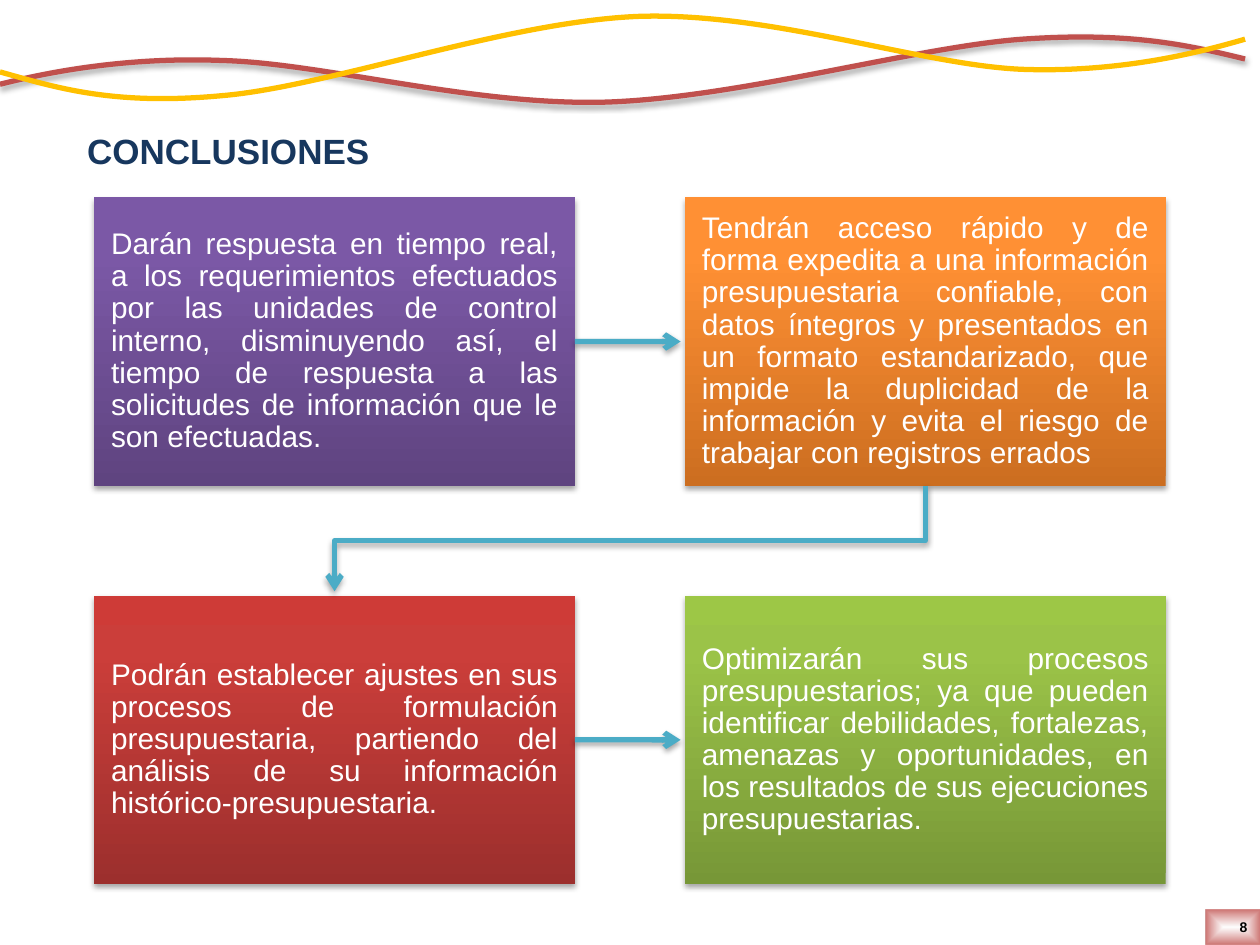
from pptx import Presentation
from pptx.dml.color import RGBColor
from pptx.enum.shapes import MSO_CONNECTOR, MSO_SHAPE
from pptx.enum.text import MSO_ANCHOR, MSO_AUTO_SIZE, PP_ALIGN
from pptx.oxml import parse_xml
from pptx.oxml.ns import nsdecls, qn
from pptx.util import Cm, Pt

NAVY = RGBColor(0x17, 0x37, 0x5E)
BRICK = RGBColor(0xC0, 0x50, 0x4D)
GOLD = RGBColor(0xFF, 0xC0, 0x00)
TEAL = RGBColor(0x4B, 0xAC, 0xC6)
BLACK = RGBColor(0x00, 0x00, 0x00)
WHITE = RGBColor(0xFF, 0xFF, 0xFF)
PURPLES = [RGBColor(0x5F, 0x44, 0x80), RGBColor(0x7B, 0x58, 0xA6), RGBColor(0x7C, 0x57, 0xA8)]
ORANGES = [RGBColor(0xCC, 0x6E, 0x20), RGBColor(0xFF, 0x90, 0x34), RGBColor(0xFF, 0x91, 0x36)]
REDS = [RGBColor(0x9C, 0x2F, 0x2D), RGBColor(0xCB, 0x3E, 0x3A), RGBColor(0xCE, 0x3B, 0x37)]
GREENS = [RGBColor(0x77, 0x97, 0x37), RGBColor(0x9B, 0xC3, 0x48), RGBColor(0x9D, 0xC7, 0x46)]

SHADOW = (
    f'<a:effectLst {nsdecls("a")}><a:outerShdw blurRad="40000" dist="23000" dir="5400000" '
    'rotWithShape="0"><a:srgbClr val="000000"><a:alpha val="35000"/></a:srgbClr>'
    '</a:outerShdw></a:effectLst>'
)
NO_SHADOW = f'<a:effectLst {nsdecls("a")}/>'
ARROWHEAD = f'<a:tailEnd {nsdecls("a")} type="arrow"/>'
UPWARD = '<a:lin ang="16200000" scaled="0"/>'
FROM_CENTRE = '<a:path path="shape"><a:fillToRect l="50000" t="50000" r="50000" b="50000"/></a:path>'


def fill_gradient(shape, stops, direction):
    marks = "".join(
        f'<a:gs pos="{position * 1000}"><a:srgbClr val="{color}">'
        f'<a:alpha val="{opacity * 1000}"/></a:srgbClr></a:gs>'
        for position, color, opacity in stops
    )
    gradient = f'<a:gradFill {nsdecls("a")} rotWithShape="1"><a:gsLst>{marks}</a:gsLst>{direction}</a:gradFill>'
    shape.element.spPr.append(parse_xml(gradient))
    shape.line.fill.background()


def style_line(stroke, color, effect, head=None):
    stroke.line.color.rgb = color
    stroke.line.width = Pt(3)
    properties = stroke.element.spPr
    if head:
        properties.find(qn("a:ln")).append(parse_xml(head))
    properties.append(parse_xml(effect))


prs = Presentation()
prs.slide_width, prs.slide_height = Cm(25.4), Cm(19.05)
slide = prs.slides.add_slide(prs.slide_layouts[5])
shapes = slide.shapes

waves = [
    (BRICK, SHADOW, [(25.1, 1.19), (23.95, 0.91), (22.78, 0.64), (20.62, 0.79),
                     (18.49, 0.94), (14.88, 1.98), (12.19, 2.06),
                     (9.5, 2.13), (6.5, 1.27), (4.47, 1.22),
                     (2.44, 1.14), (0.79, 1.5), (0, 1.7)]),
    (GOLD, NO_SHADOW, [(0, 1.45), (1.17, 1.78), (2.31, 2.13), (4.47, 1.93),
                       (6.63, 1.75), (10.21, 0.43), (12.9, 0.33),
                       (15.6, 0.25), (18.59, 1.32), (20.62, 1.4),
                       (22.66, 1.47), (24.31, 1.02), (25.1, 0.79)]),
]
for color, effect, knots in waves:
    start, *controls = [(Cm(x), Cm(y)) for x, y in knots]
    builder = shapes.build_freeform(*start)
    builder.add_line_segments(controls, close=False)
    wave = builder.convert_to_shape()
    segments = list(wave.element.spPr.iter(qn("a:lnTo")))
    for first in range(0, len(segments), 3):
        curve = parse_xml(f'<a:cubicBezTo {nsdecls("a")}/>')
        segments[first].addprevious(curve)
        for segment in segments[first:first + 3]:
            curve.append(segment[0])
            segment.getparent().remove(segment)
    wave.fill.background()
    style_line(wave, color, effect)

heading = shapes.title
heading_format = {"left": Cm(1.5), "top": Cm(2.47), "width": Cm(6.27), "height": Cm(1.12)}
for name, value in heading_format.items():
    setattr(heading, name, value)
heading.text_frame.text = "CONCLUSIONES"
heading.text_frame.word_wrap = False
heading.text_frame.auto_size = MSO_AUTO_SIZE.NONE
heading.text_frame.vertical_anchor = MSO_ANCHOR.MIDDLE
heading.text_frame.paragraphs[0].alignment = PP_ALIGN.LEFT
heading_font = {"name": "Arial", "size": Pt(20), "bold": True}
for name, value in heading_font.items():
    setattr(heading.text_frame.paragraphs[0].font, name, value)
heading.text_frame.paragraphs[0].font.color.rgb = NAVY

LEFT, TOP, WIDTH, HEIGHT = 1.9, 3.98, 9.69, 5.81
COLUMN_STEP, ROW_STEP, ARROW_LENGTH = 11.91, 8.03, 2.13
conclusions = [
    (PURPLES, "Darán respuesta en tiempo real, a los requerimientos efectuados por las unidades de "
              "control interno, disminuyendo así, el tiempo de respuesta a las solicitudes de "
              "información que le son efectuadas."),
    (ORANGES, "Tendrán acceso rápido y de forma expedita a una información presupuestaria confiable, "
              "con datos íntegros y presentados en un formato estandarizado, que impide la duplicidad "
              "de la información y evita el riesgo de trabajar con registros errados"),
    (REDS, "Podrán establecer ajustes en sus procesos de formulación presupuestaria, partiendo del "
           "análisis de su información histórico-presupuestaria."),
    (GREENS, "Optimizarán sus procesos presupuestarios; ya que pueden identificar debilidades, "
             "fortalezas, amenazas y oportunidades, en los resultados de sus ejecuciones "
             "presupuestarias."),
]
frame_format = {"word_wrap": True, "vertical_anchor": MSO_ANCHOR.MIDDLE,
                "margin_left": Cm(0.34), "margin_right": Cm(0.34),
                "margin_top": Cm(0.34), "margin_bottom": Cm(0.34)}
for index, (tones, sentence) in enumerate(conclusions):
    row, column = divmod(index, 2)
    x, y = LEFT + column * COLUMN_STEP, TOP + row * ROW_STEP
    card = shapes.add_shape(MSO_SHAPE.RECTANGLE, Cm(x), Cm(y), Cm(WIDTH), Cm(HEIGHT))
    fill_gradient(card, zip((0, 80, 100), tones, (100, 100, 100)), UPWARD)
    card.element.spPr.append(parse_xml(SHADOW))
    for name, value in frame_format.items():
        setattr(card.text_frame, name, value)
    paragraph = card.text_frame.paragraphs[0]
    paragraph.text = sentence
    paragraph.alignment = PP_ALIGN.JUSTIFY
    paragraph.line_spacing = 0.9
    paragraph.font.name, paragraph.font.size = "Arial", Pt(17)
    paragraph.font.color.rgb = WHITE
    if column == 0:
        edge, middle = x + WIDTH, y + HEIGHT / 2
        arrow = shapes.add_connector(MSO_CONNECTOR.STRAIGHT, Cm(edge), Cm(middle),
                                     Cm(edge + ARROW_LENGTH), Cm(middle))
        arrow.begin_connect(card, 3)
        style_line(arrow, TEAL, SHADOW, ARROWHEAD)

left_middle = LEFT + WIDTH / 2
right_middle = left_middle + COLUMN_STEP
row_end = TOP + HEIGHT
turn = row_end + 1.11
builder = shapes.build_freeform(Cm(right_middle), Cm(row_end))
builder.add_line_segments([(Cm(right_middle), Cm(turn)), (Cm(left_middle), Cm(turn)),
                           (Cm(left_middle), Cm(row_end + ARROW_LENGTH))], close=False)
return_arrow = builder.convert_to_shape()
return_arrow.fill.background()
style_line(return_arrow, TEAL, SHADOW, ARROWHEAD)

page_number = shapes.add_shape(MSO_SHAPE.RECTANGLE, Cm(24.3), Cm(18.33), Cm(1.1), Cm(0.72))
fill_gradient(page_number, [(0, WHITE, 71), (100, BRICK, 80)], FROM_CENTRE)
page_number.shadow.inherit = False
page_number.text_frame.vertical_anchor = MSO_ANCHOR.MIDDLE
number = page_number.text_frame.paragraphs[0]
number.text = "8"
number.alignment = PP_ALIGN.RIGHT
number_font = {"name": "Arial", "size": Pt(8), "bold": True}
for name, value in number_font.items():
    setattr(number.font, name, value)
number.font.color.rgb = BLACK

prs.save("out.pptx")
